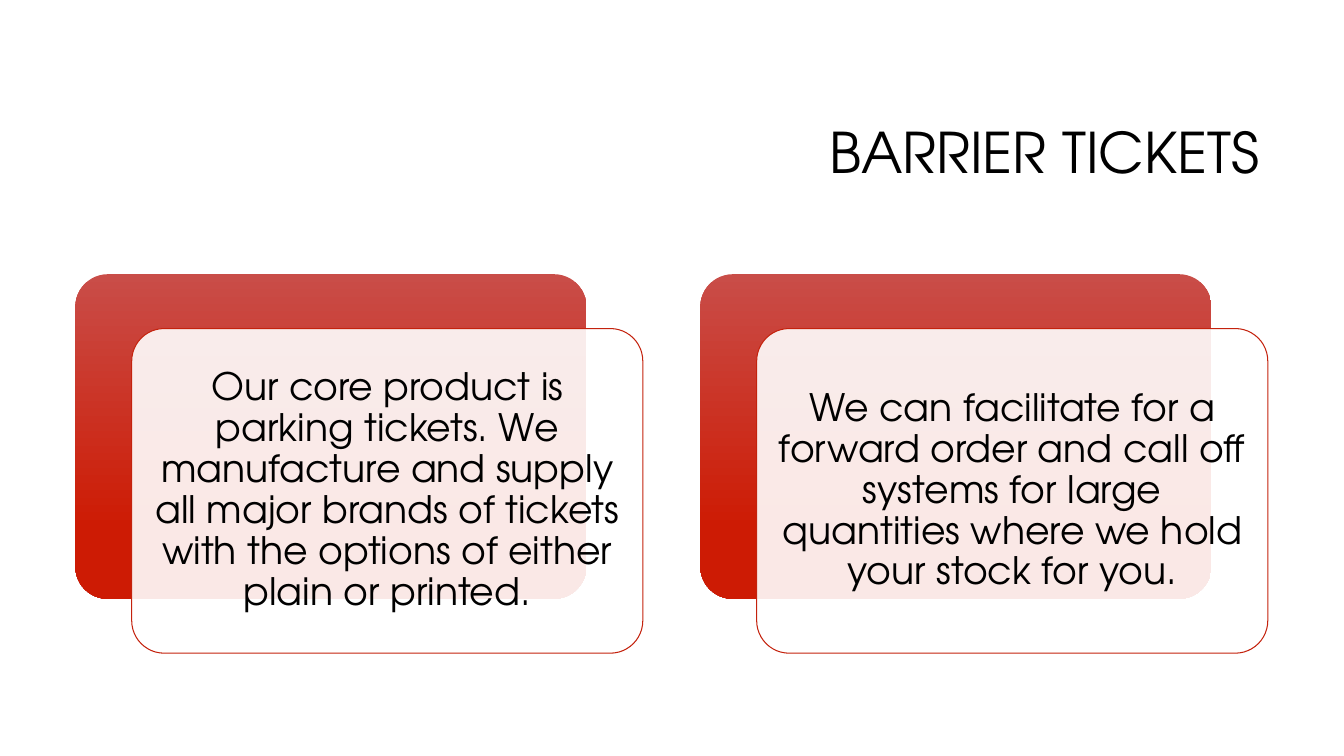
"""Build the barrier tickets slide with two layered text cards."""
from dataclasses import dataclass

from pptx import Presentation
from pptx import util as u
from pptx.dml.color import RGBColor
from pptx.enum import shapes, text
from pptx.oxml import parse_xml
from pptx.oxml.ns import nsdecls, qn
from pptx.shapes.autoshape import Shape
from pptx.slide import Slide
from pptx.text.text import TextFrame


@dataclass(frozen=True)
class Theme:
    """Colours, font and type sizes of the slide."""

    font: str = "TeX Gyre Adventor"
    ink: RGBColor = RGBColor(0x00, 0x00, 0x00)
    paper: RGBColor = RGBColor(0xFF, 0xFF, 0xFF)
    outline: RGBColor = RGBColor(0xC4, 0x22, 0x0D)
    gradient_top: RGBColor = RGBColor(0xC9, 0x4D, 0x48)
    gradient_bottom: RGBColor = RGBColor(0xCD, 0x1B, 0x04)
    paper_opacity: int = 90
    title_size: u.Pt = u.Pt(40)
    body_size: u.Pt = u.Pt(27)


@dataclass(frozen=True)
class Box:
    """A rectangle in centimetres."""

    left: float
    top: float
    width: float
    height: float

    def shifted(self, across: float, down: float = 0) -> "Box":
        """Return the same rectangle moved across and down."""
        return Box(self.left + across, self.top + down, self.width, self.height)

    def lengths(self) -> tuple[u.Cm, u.Cm, u.Cm, u.Cm]:
        """Return left, top, width and height as lengths."""
        return u.Cm(self.left), u.Cm(self.top), u.Cm(self.width), u.Cm(self.height)


THEME = Theme()
TITLE_BOX = Box(8.05, 2.13, 23.93, 3.58)
FIRST_PANEL = Box(1.9, 6.91, 12.88, 8.18)
PANEL_PITCH = 15.75
CARD_OFFSET = (1.42, 1.37)
CARD_MARGIN = u.Cm(0.28)
STATEMENTS = (
    "Our core product is parking tickets. We manufacture and supply all major "
    "brands of tickets with the options of either plain or printed.",
    "We can facilitate for a forward order and call off systems for large "
    "quantities where we hold your stock for you.",
)


def write_text(frame: TextFrame, words: str, size: u.Pt, alignment: text.PP_ALIGN) -> None:
    """Set one vertically centred paragraph in the theme font."""
    frame.word_wrap = True
    frame.vertical_anchor = text.MSO_ANCHOR.MIDDLE
    frame.text = words
    paragraph = frame.paragraphs[0]
    paragraph.alignment = alignment
    paragraph.line_spacing = 0.9
    font = paragraph.runs[0].font
    font.name = THEME.font
    font.size = size
    font.color.rgb = THEME.ink


def add_rounded(slide: Slide, box: Box) -> Shape:
    """Add a rounded rectangle without a shadow."""
    shape = slide.shapes.add_shape(shapes.MSO_SHAPE.ROUNDED_RECTANGLE, *box.lengths())
    shape.adjustments[0] = 0.1
    shape.shadow.inherit = False
    return shape


def add_panel(slide: Slide, box: Box) -> None:
    """Add the red gradient panel behind a card."""
    panel = add_rounded(slide, box)
    panel.line.fill.background()
    panel.fill.gradient()
    panel.fill.gradient_angle = 270
    top, bottom = panel.fill.gradient_stops
    top.position, top.color.rgb = 0, THEME.gradient_top
    bottom.position, bottom.color.rgb = 0.78, THEME.gradient_bottom


def add_card(slide: Slide, box: Box, words: str) -> None:
    """Add a translucent outlined card holding a statement."""
    card = add_rounded(slide, box)
    card.fill.solid()
    card.fill.fore_color.rgb = THEME.paper
    colour = card.fill._xPr.find(qn("a:solidFill"))[0]
    colour.append(parse_xml(f'<a:alpha {nsdecls("a")} val="{THEME.paper_opacity * 1000}"/>'))
    card.line.color.rgb = THEME.outline
    card.line.width = u.Pt(0.75)
    frame = card.text_frame
    frame.margin_left = frame.margin_right = CARD_MARGIN
    frame.margin_top = frame.margin_bottom = CARD_MARGIN
    write_text(frame, words, THEME.body_size, text.PP_ALIGN.CENTER)


def main() -> None:
    """Create and save the presentation."""
    presentation = Presentation()
    presentation.slide_width = u.Cm(33.87)
    presentation.slide_height = u.Cm(19.05)
    slide = presentation.slides.add_slide(presentation.slide_layouts[6])
    title = slide.shapes.add_textbox(*TITLE_BOX.lengths())
    write_text(title.text_frame, "BARRIER TICKETS", THEME.title_size, text.PP_ALIGN.RIGHT)
    for index, words in enumerate(STATEMENTS):
        panel_box = FIRST_PANEL.shifted(index * PANEL_PITCH)
        add_panel(slide, panel_box)
        add_card(slide, panel_box.shifted(*CARD_OFFSET), words)
    presentation.save("out.pptx")


if __name__ == "__main__":
    main()
